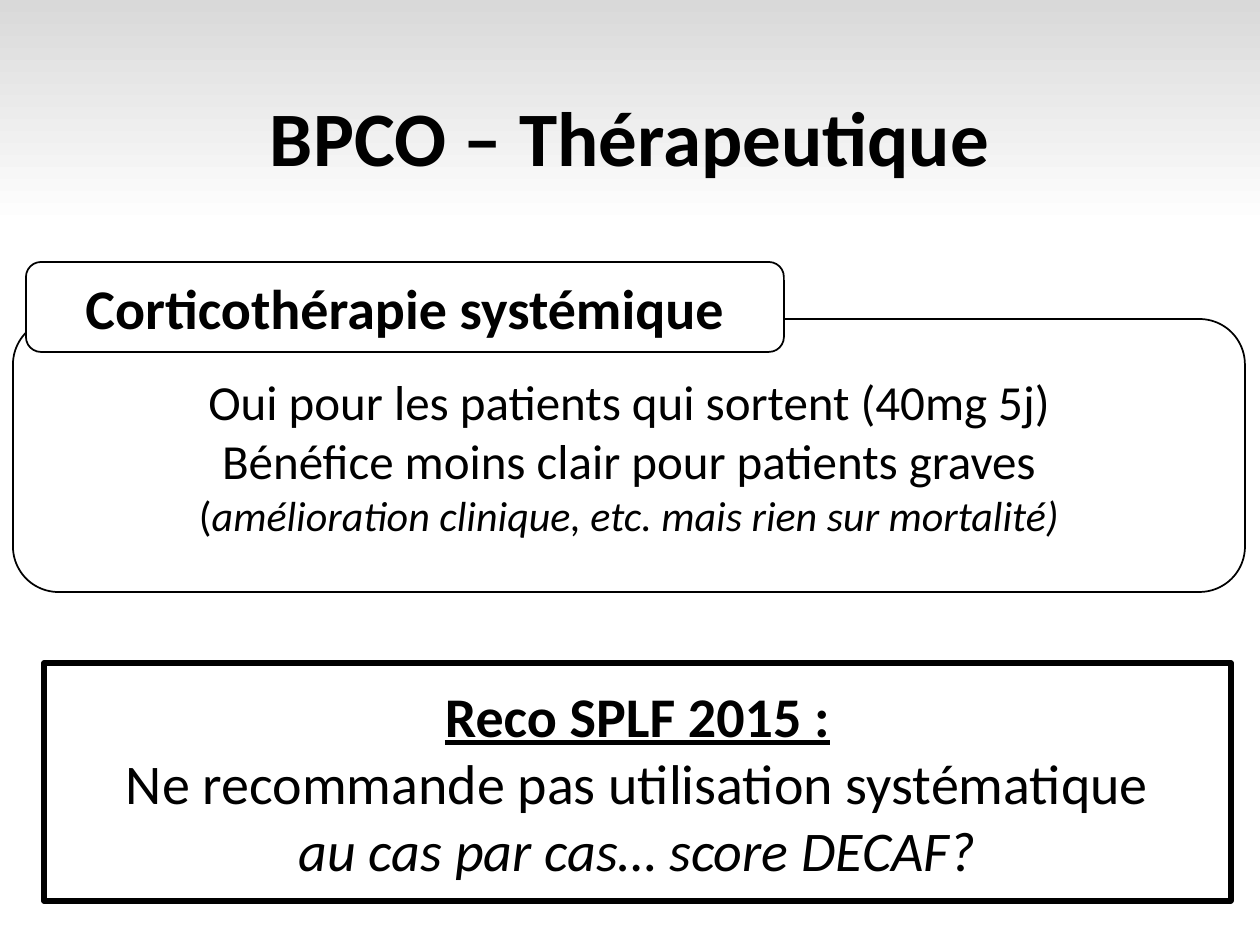
from dataclasses import dataclass

from pptx import Presentation
from pptx.dml.color import RGBColor
from pptx.enum.shapes import MSO_SHAPE
from pptx.enum.text import MSO_ANCHOR, PP_ALIGN
from pptx.slide import Slide
from pptx.util import Pt

EMU_PER_PX = 914400 / 126


@dataclass(frozen=True)
class Theme:
    font: str = "Calibri"
    ink: RGBColor = RGBColor(0x00, 0x00, 0x00)
    paper: RGBColor = RGBColor(0xFF, 0xFF, 0xFF)
    shade: RGBColor = RGBColor(0xD9, 0xD9, 0xD9)
    title: int = 44
    heading: int = 32
    body: int = 28
    detail: int = 24


THEME = Theme()


@dataclass(frozen=True)
class Run:
    text: str
    size: int
    bold: bool = False
    italic: bool = False
    underline: bool = False


@dataclass(frozen=True)
class Panel:
    left: int
    top: int
    width: int
    height: int
    paragraphs: list[list[Run]]
    shape: MSO_SHAPE | None = None
    filled: bool = True
    line_width: int = 1
    line_spacing: float = 1.0


PANELS = [
    Panel(87, 50, 1086, 183,
          [[Run("BPCO – Thérapeutique", THEME.title, bold=True)]],
          line_spacing=0.9),
    Panel(13, 319, 1232, 273, [
        [Run("Oui pour les patients qui sortent (40mg 5j)", THEME.body)],
        [Run("Bénéfice moins clair pour patients graves\n", THEME.body),
         Run("(", THEME.detail),
         Run("amélioration clinique, etc. mais rien sur mortalité)",
             THEME.detail, italic=True)],
    ], MSO_SHAPE.ROUNDED_RECTANGLE, filled=False),
    Panel(26, 262, 758, 90,
          [[Run("Corticothérapie systémique", THEME.heading, bold=True)]],
          MSO_SHAPE.ROUNDED_RECTANGLE),
    Panel(44, 663, 1187, 238, [
        [Run("Reco SPLF 2015 :", THEME.heading, bold=True, underline=True)],
        [Run("Ne recommande pas utilisation systématique\n", THEME.heading),
         Run("au cas par cas… score DECAF?", THEME.heading, italic=True)],
    ], MSO_SHAPE.RECTANGLE, line_width=3),
]


def px(value: int) -> int:
    return round(value * EMU_PER_PX)


def add_text(p, text: str, *, size: int, bold: bool = False,
             italic: bool = False, underline: bool = False) -> None:
    line, has_break, _ = text.partition("\n")
    r = p.add_run()
    r.text = line
    r.font.name = THEME.font
    r.font.size = Pt(size)
    r.font.color.rgb = THEME.ink
    r.font.bold = bold
    r.font.italic = italic
    r.font.underline = underline
    if has_break:
        p.add_line_break()


def draw_panel(s: Slide, panel: Panel) -> None:
    frame = [px(v) for v in (panel.left, panel.top, panel.width, panel.height)]
    if panel.shape is None:
        sp = s.shapes.add_textbox(*frame)
    else:
        sp = s.shapes.add_shape(panel.shape, *frame)
        sp.shadow.inherit = False
        sp.line.color.rgb = THEME.ink
        sp.line.width = Pt(panel.line_width)
        if panel.filled:
            sp.fill.solid()
            sp.fill.fore_color.rgb = THEME.paper
        else:
            sp.fill.background()
    tf = sp.text_frame
    tf.word_wrap = True
    tf.vertical_anchor = MSO_ANCHOR.MIDDLE
    for i, runs in enumerate(panel.paragraphs):
        p = tf.add_paragraph() if i else tf.paragraphs[0]
        p.alignment = PP_ALIGN.CENTER
        p.line_spacing = panel.line_spacing
        for run in runs:
            add_text(p, run.text, size=run.size, bold=run.bold,
                     italic=run.italic, underline=run.underline)


def draw_background(s: Slide) -> None:
    fill = s.background.fill
    fill.gradient()
    fill.gradient_angle = 270
    stops = ((0, THEME.shade), (0.24, THEME.paper))
    for stop, (position, color) in zip(fill.gradient_stops, stops):
        stop.position = position
        stop.color.rgb = color


def main() -> None:
    prs = Presentation()
    prs.slide_width, prs.slide_height = px(1260), px(945)
    s = prs.slides.add_slide(prs.slide_layouts[6])
    draw_background(s)
    for panel in PANELS:
        draw_panel(s, panel)
    prs.save("out.pptx")


if __name__ == "__main__":
    main()
